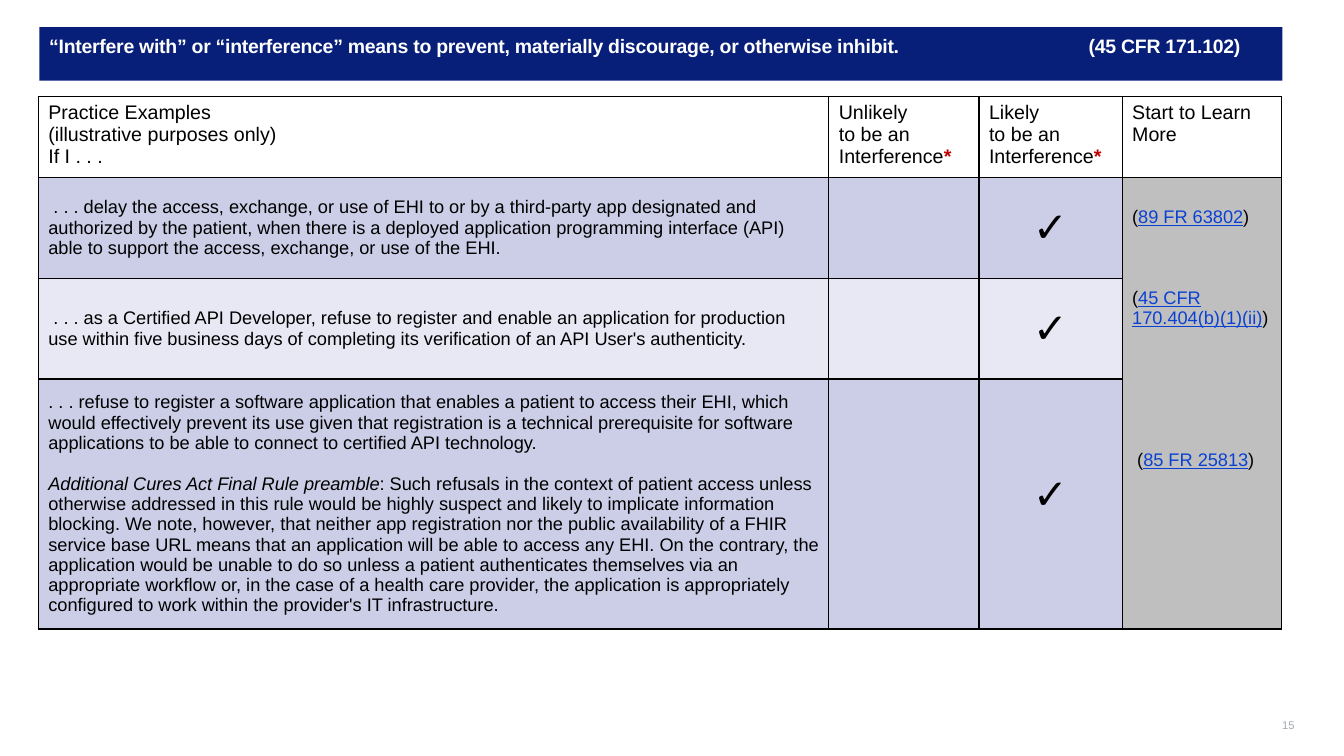
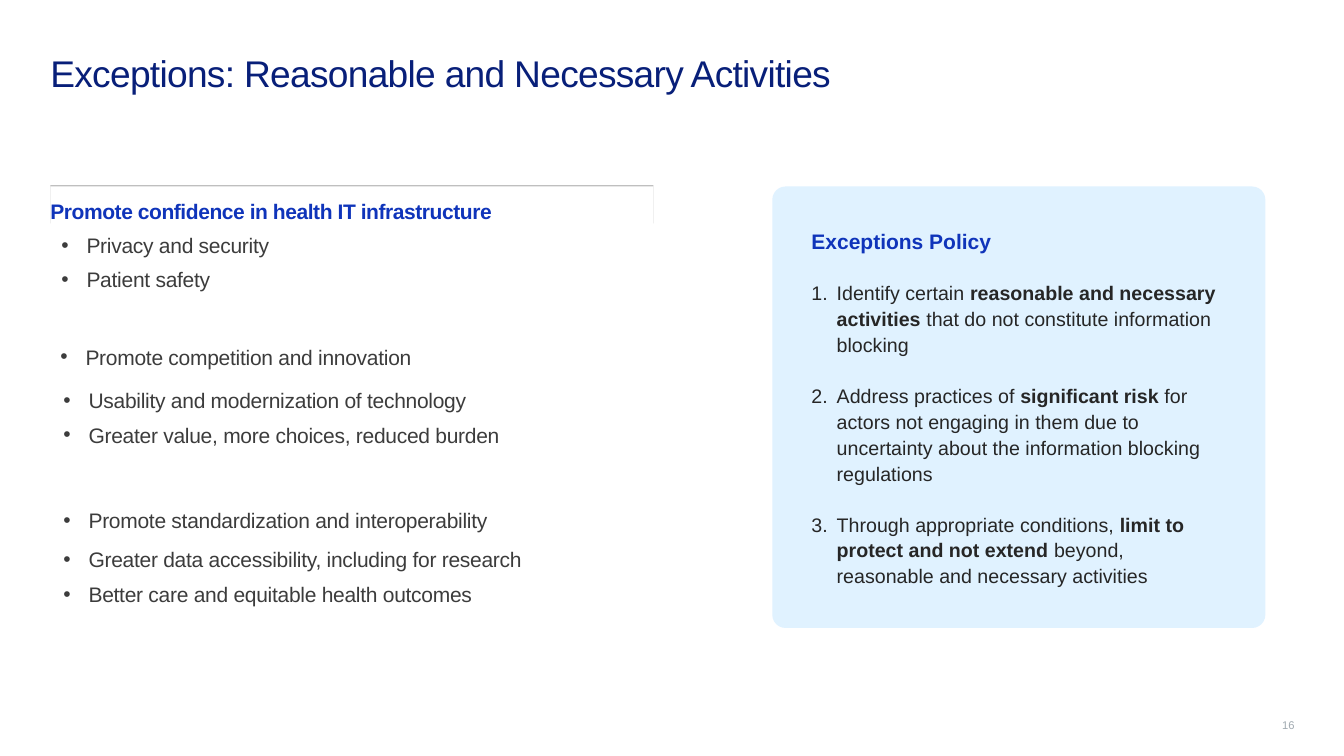
from dataclasses import dataclass

from lxml.etree import SubElement
from pptx import Presentation
from pptx.dml.color import RGBColor
from pptx.enum.shapes import MSO_SHAPE
from pptx.enum.text import MSO_ANCHOR, PP_ALIGN
from pptx.oxml.ns import qn
from pptx.util import Emu, Pt

EMU_PER_PX = 9144


@dataclass(frozen=True)
class Theme:
    font: str = "Arial"
    navy: str = "081F79"
    blue: str = "0F34BA"
    link: str = "0A41D3"
    red: str = "C00000"
    black: str = "000000"
    charcoal: str = "262626"
    slate: str = "3C3C3C"
    silver: str = "BFBFBF"
    footer: str = "A1AAB1"
    white: str = "FFFFFF"
    lavender: str = "CCCEE7"
    pale: str = "E7E8F3"
    sky: str = "E0F2FF"


THEME = Theme()

STYLES = {
    "title": dict(size=26.5, color=THEME.navy, spacing=-50),
    "banner": dict(size=13.9, color=THEME.white, bold=True, spacing=-20),
    "heading": dict(size=15, color=THEME.blue, bold=True, spacing=-30),
    "bullet": dict(size=15, color=THEME.slate, spacing=-20),
    "policy_heading": dict(size=15, color=THEME.blue, bold=True),
    "policy": dict(size=14, color=THEME.charcoal),
    "table_head": dict(size=14, color=THEME.black),
    "table_body": dict(size=13, color=THEME.black),
    "check": dict(size=30, color=THEME.black, bold=True),
    "number": dict(size=8, color=THEME.footer),
}

BOLD = dict(bold=True)
ITALIC = dict(italic=True)
LINK = dict(color=THEME.link, underline=True)
ASTERISK = ("*", dict(color=THEME.red, bold=True))

HEADERS = [
    [["Practice Examples"], ["(illustrative purposes only)"], ["If I . . ."]],
    [["Unlikely"], ["to be an"], ["Interference", ASTERISK]],
    [["Likely"], ["to be an Interference", ASTERISK]],
    [["Start to Learn More"]],
]

PRACTICES = [
    [[" . . . delay the access, exchange, or use of EHI to or by a third-party app "
      "designated and authorized by the patient, when there is a deployed application "
      "programming interface (API) able to support the access, exchange, or use of the EHI."]],
    [[" . . . as a Certified API Developer, refuse to register and enable an application "
      "for production use within five business days of completing its verification of an "
      "API User's authenticity."]],
    [[". . . refuse to register a software application that enables a patient to access "
      "their EHI, which would effectively prevent its use given that registration is a "
      "technical prerequisite for software applications to be able to connect to certified "
      "API technology."],
     [("Additional Cures Act Final Rule preamble", ITALIC),
      ": Such refusals in the context of patient access unless otherwise addressed in this "
      "rule would be highly suspect and likely to implicate information blocking. We note, "
      "however, that neither app registration nor the public availability of a FHIR service "
      "base URL means that an application will be able to access any EHI. On the contrary, "
      "the application would be unable to do so unless a patient authenticates themselves "
      "via an appropriate workflow or, in the case of a health care provider, the "
      "application is appropriately configured to work within the provider's IT "
      "infrastructure."]],
]

REFERENCES = [
    ["(", ("89 FR 63802", LINK), ")"],
    ["(", ("45 CFR 170.404(b)(1)(ii)", LINK), ")"],
    [" (", ("85 FR 25813", LINK), ")"],
]

BULLET_GROUPS = [
    ((51, 223, 598, 95), ["Privacy and security", "Patient safety"]),
    ((50, 334, 598, 41), ["Promote competition and innovation"]),
    ((53, 377, 595, 91), ["Usability and modernization of technology",
                          "Greater value, more choices, reduced burden"]),
    ((53, 496, 595, 38), ["Promote standardization and interoperability"]),
    ((53, 535, 595, 97), ["Greater data accessibility, including for research",
                          "Better care and equitable health outcomes"]),
]

POLICIES = [
    ["Identify certain ", ("reasonable and necessary activities ", BOLD),
     "that do not constitute information blocking"],
    ["Address practices of ", ("significant risk ", BOLD),
     "for actors not engaging in them due to uncertainty about the information "
     "blocking regulations"],
    ["Through appropriate conditions, ", ("limit to protect and not extend ", BOLD),
     "beyond, reasonable and necessary activities"],
]


def px(value):
    return Emu(value * EMU_PER_PX)


def box(*lengths):
    return [px(length) for length in lengths]


def rgb(color):
    return RGBColor.from_string(color)


def assign(target, values):
    for name, value in values.items():
        setattr(target, name, value)


def format_run(run, style):
    values = dict(style)
    run.font.color.rgb = rgb(values.pop("color"))
    spacing = values.pop("spacing", None)
    if spacing is not None:
        run.font._element.set("spc", str(spacing))
    values["size"] = Pt(values["size"])
    assign(run.font, dict(values, name=THEME.font))


def add_marker(paragraph, marker, indent):
    properties = paragraph._p.get_or_add_pPr()
    properties.set("marL", str(px(indent)))
    properties.set("indent", str(-px(indent)))
    SubElement(properties, qn("a:buFont"), typeface=THEME.font)
    tag, attributes = marker
    SubElement(properties, qn(tag), attributes)


def write(frame, paragraphs, style, gaps=(), marker=None, indent=25, **layout):
    for index, pieces in enumerate(paragraphs):
        first = frame.paragraphs[0]
        paragraph = frame.add_paragraph() if first.runs else first
        assign(paragraph, layout)
        if index and gaps:
            paragraph.space_before = Pt(gaps[index - 1])
        if marker:
            add_marker(paragraph, marker, indent)
        for piece in pieces:
            text, changes = (piece, {}) if isinstance(piece, str) else piece
            run = paragraph.add_run()
            run.text = text
            format_run(run, STYLES[style] | changes)


def set_frame(shape, margins=None, anchor=MSO_ANCHOR.TOP):
    frame = shape.text_frame
    assign(frame, dict(word_wrap=True, vertical_anchor=anchor))
    if margins:
        sides = ("margin_left", "margin_top", "margin_right", "margin_bottom")
        assign(frame, dict(zip(sides, box(*margins))))
    return frame


def add_text(slide, place, paragraphs, style, margins=None, anchor=MSO_ANCHOR.TOP, **layout):
    frame = set_frame(slide.shapes.add_textbox(*box(*place)), margins, anchor)
    write(frame, paragraphs, style, **layout)
    return frame


def add_panel(slide, kind, place, color):
    shape = slide.shapes.add_shape(kind, *box(*place))
    shape.shadow.inherit = False
    shape.fill.solid()
    shape.fill.fore_color.rgb = rgb(color)
    shape.line.fill.background()
    return shape


def add_top_shadow(shape, color):
    effects = shape._element.spPr.find(qn("a:effectLst"))
    shadow = SubElement(effects, qn("a:outerShdw"), blurRad="0", dist=str(Pt(1)),
                        dir="16200000", algn="b", rotWithShape="0")
    SubElement(shadow, qn("a:srgbClr"), val=color)


def add_slide(presentation, number):
    slide = presentation.slides.add_slide(presentation.slide_layouts[6])
    add_text(slide, (1254, 689, 30, 37), [[number]], "number", margins=(0, 0, 0, 0),
             anchor=MSO_ANCHOR.BOTTOM, alignment=PP_ALIGN.RIGHT, line_spacing=0.9)
    return slide


def add_banner(slide, definition, citation):
    shape = add_panel(slide, MSO_SHAPE.RECTANGLE, (39, 27, 1233, 53), THEME.navy)
    frame = set_frame(shape)
    write(frame, [[f"{definition}\t{citation}"]], "banner",
          alignment=PP_ALIGN.LEFT, line_spacing=1.1)
    tabs = SubElement(frame.paragraphs[0]._p.get_or_add_pPr(), qn("a:tabLst"))
    SubElement(tabs, qn("a:tab"), pos=str(px(1031)), algn="l")


def add_heading(slide, text):
    shape = add_panel(slide, MSO_SHAPE.RECTANGLE, (50, 185, 598, 38), THEME.white)
    add_top_shadow(shape, THEME.silver)
    write(set_frame(shape, margins=(0, 9, 0, 5)), [[text]], "heading",
          alignment=PP_ALIGN.LEFT, line_spacing=1.1)


def format_cell(cell, color):
    properties = cell._tc.get_or_add_tcPr()
    for side in ("a:lnL", "a:lnR", "a:lnT", "a:lnB"):
        border = SubElement(properties, qn(side), w=str(Pt(1)))
        fill = SubElement(border, qn("a:solidFill"))
        SubElement(fill, qn("a:srgbClr"), val=THEME.black)
    cell.fill.solid()
    cell.fill.fore_color.rgb = rgb(color)


def add_practice_table(slide):
    widths, heights = (784, 149, 142, 158), (80, 100, 100, 248)
    place = box(38, 96, sum(widths), sum(heights))
    table = slide.shapes.add_table(len(heights), len(widths), *place).table
    assign(table, dict(first_row=False, horz_banding=False))
    for column, width in zip(table.columns, widths):
        column.width = px(width)
    for row, height in zip(table.rows, heights):
        row.height = px(height)

    row_colors = (THEME.white, THEME.lavender, THEME.pale, THEME.lavender)
    for row, color in enumerate(row_colors):
        for column in range(len(widths)):
            is_reference = row > 0 and column == 3
            format_cell(table.cell(row, column), THEME.silver if is_reference else color)

    for column, header in enumerate(HEADERS):
        write(table.cell(0, column).text_frame, header, "table_head")
    for row, practice in enumerate(PRACTICES, 1):
        example, check = table.cell(row, 0), table.cell(row, 2)
        example.vertical_anchor = check.vertical_anchor = MSO_ANCHOR.MIDDLE
        write(example.text_frame, practice, "table_body", gaps=[14.5])
        check.margin_bottom = px(23 if row == 3 else 5)
        write(check.text_frame, [["✓"]], "check", alignment=PP_ALIGN.CENTER)

    references = table.cell(1, 3)
    references.merge(table.cell(3, 3))
    references.margin_top = px(29)
    write(references.text_frame, REFERENCES, "table_body", gaps=[43.5, 87])


def build_interference(presentation):
    slide = add_slide(presentation, "15")
    add_practice_table(slide)
    add_banner(slide, "“Interfere with” or “interference” means to prevent, materially "
                      "discourage, or otherwise inhibit.", "(45 CFR 171.102)")


def build_exceptions(presentation):
    slide = add_slide(presentation, "16")
    panel = add_panel(slide, MSO_SHAPE.ROUNDED_RECTANGLE, (766, 185, 489, 438), THEME.sky)
    panel.adjustments[0] = 0.03
    add_text(slide, (50, 50, 1234, 97), [["Exceptions: Reasonable and Necessary Activities"]],
             "title", margins=(0, 0, 0, 5))
    add_heading(slide, "Promote confidence in health IT infrastructure")
    for place, items in BULLET_GROUPS:
        add_text(slide, place, [[item] for item in items], "bullet", gaps=[5],
                 marker=("a:buChar", {"char": "•"}), line_spacing=1.1)

    spacing = dict(line_spacing=1.1, space_after=Pt(6))
    frame = add_text(slide, (795, 219, 431, 395), [["Exceptions Policy"]],
                     "policy_heading", **spacing)
    write(frame, POLICIES, "policy", marker=("a:buAutoNum", {"type": "arabicPeriod"}),
          space_before=Pt(12), **spacing)


def main():
    presentation = Presentation()
    assign(presentation, dict(slide_width=px(1333), slide_height=px(750)))
    build_interference(presentation)
    build_exceptions(presentation)
    presentation.save("out.pptx")


if __name__ == "__main__":
    main()
